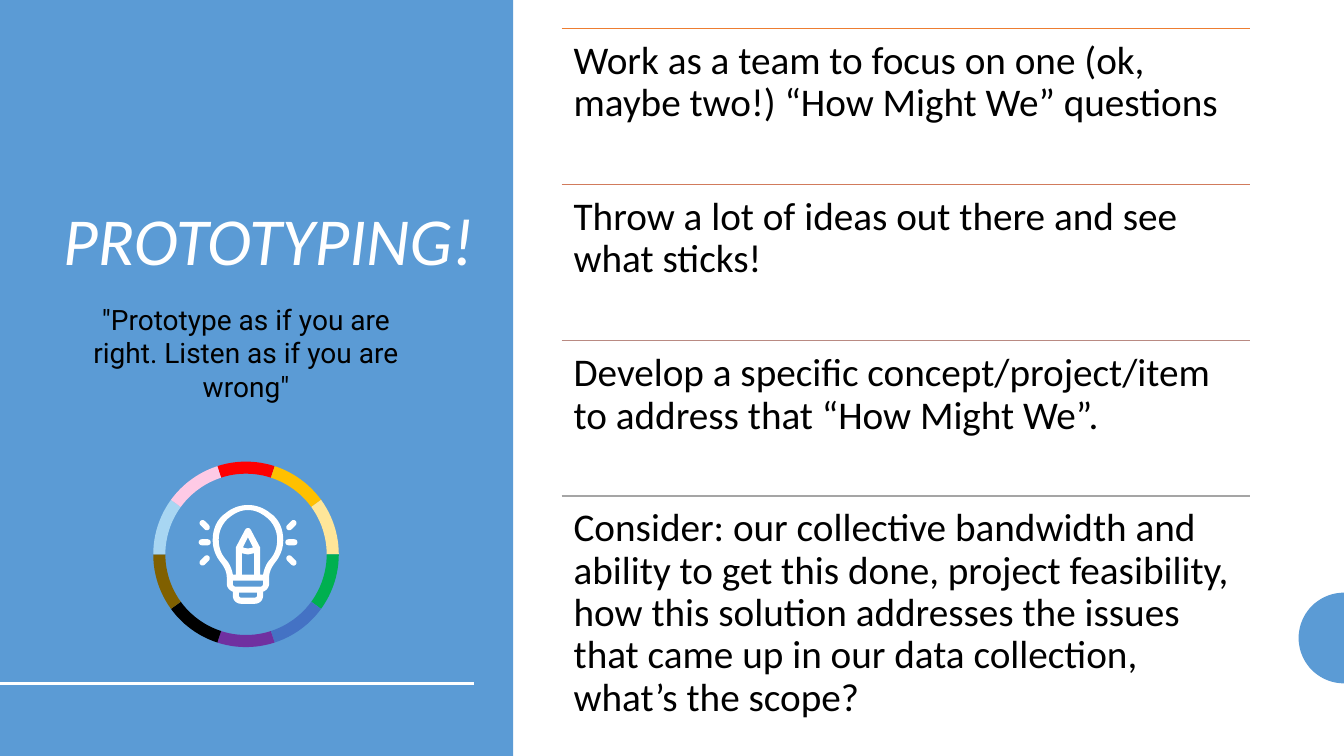
from math import cos, radians, sin

from lxml import etree
from pptx import Presentation
from pptx.dml.color import RGBColor
from pptx.enum.shapes import MSO_CONNECTOR, MSO_SHAPE
from pptx.enum.text import PP_ALIGN
from pptx.oxml.ns import qn
from pptx.util import Pt

PX = 9144  # 100 px to the inch
RECTANGLE, ROUNDED = MSO_SHAPE.RECTANGLE, MSO_SHAPE.ROUNDED_RECTANGLE
STRAIGHT = MSO_CONNECTOR.STRAIGHT
LEFT, CENTER, RIGHT = PP_ALIGN.LEFT, PP_ALIGN.CENTER, PP_ALIGN.RIGHT

COLORS = {
    "blue": "5B9BD5", "white": "FFFFFF", "black": "000000",
    "step1": "ED7D31", "step2": "D17B5C", "step3": "B98A82", "step4": "A5A5A5",
    "red": "FF0000", "gold": "FFC000", "cream": "FFE699", "green": "00B050",
    "royal": "4472C4", "purple": "7030A0", "brown": "806000",
    "sky": "A8D6F2", "pink": "FECAE5",
}
RING = ["red", "gold", "cream", "green", "royal",
        "purple", "black", "brown", "sky", "pink"]
STEPS = [
    ("step1", "Work as a team to focus on one (ok, maybe two!) “How Might We” questions"),
    ("step2", "Throw a lot of ideas out there and see what sticks!"),
    ("step3", "Develop a specific concept/project/item to address that “How Might We”."),
    ("step4", "Consider: our collective bandwidth and ability to get this done, project "
              "feasibility, how this solution addresses the issues that came up in our "
              "data collection, what’s the scope?"),
]
# Right halves of the bulb's outlines, x from its axis: points or cubic curves
BULB_HALVES = [
    [(0, 0), (8, 0, 16, 3, 22, 8), (31, 14, 35, 24, 35, 35), (35, 43, 32, 51, 27, 57),
     (23, 62, 21, 67, 21, 72), (21, 78), (21, 82, 18, 85, 15, 86), (15, 90),
     (15, 95, 11, 98, 7, 98), (0, 98)],
    [(0, 5), (7, 5, 13, 8, 18, 12), (25, 17, 29, 26, 29, 34), (29, 42, 27, 48, 22, 54),
     (18, 58, 16, 64, 15, 69), (12, 69), (12, 42), (3, 25), (2, 23, 1, 23, 0, 23)],
    [(0, 32), (5, 42), (3, 43, 1, 43, 0, 43)],
    [(0, 49), (2, 49, 4, 48, 6, 48), (6, 69), (0, 69)],
    [(0, 75), (15, 75), (15, 78), (15, 80, 14, 81, 12, 81), (0, 81)],
    [(0, 87), (9, 87), (9, 90), (9, 91, 8, 92, 6, 92), (0, 92)],
]


def color(name):
    return RGBColor.from_string(COLORS[name])


def paint(shape, fill):
    shape.shadow.inherit = False
    shape.fill.solid()
    shape.fill.fore_color.rgb = color(fill)
    shape.line.fill.background()


def add_block(slide, preset, box, fill):
    block = slide.shapes.add_shape(preset, *(v * PX for v in box))
    paint(block, fill)
    return block


def add_outline(slide, contours, fill):
    contours = [[(x * PX, y * PX) for x, y in contour] for contour in contours]
    builder = slide.shapes.build_freeform(*contours[0][0], scale=1.0)
    builder.add_line_segments(contours[0][1:], close=True)
    for contour in contours[1:]:
        builder.move_to(*contour[0])
        builder.add_line_segments(contour[1:], close=True)
    paint(builder.convert_to_shape(), fill)


def add_rule(slide, left, right, y, name, points):
    rule = slide.shapes.add_connector(STRAIGHT, left * PX, y * PX, right * PX, y * PX)
    rule.line.color.rgb = color(name)
    rule.line.width = Pt(points)
    etree.SubElement(rule._element.spPr, qn("a:effectLst"))


def add_text(slide, box, text, ink, align, spacing, inset, font):
    frame = slide.shapes.add_textbox(*(v * PX for v in box)).text_frame
    frame.word_wrap = True
    for side, margin in inset.items():
        setattr(frame, f"margin_{side}", margin * PX)
    paragraph = frame.paragraphs[0]
    paragraph.alignment, paragraph.line_spacing = align, spacing
    run = paragraph.add_run()
    run.text = text
    run.font.color.rgb = color(ink)
    for key, value in font.items():
        setattr(run.font, key, value)


def arc(cx, cy, radius, start, end, steps):
    angles = [radians(start + (end - start) * i / steps) for i in range(steps + 1)]
    return [(cx + radius * cos(a), cy + radius * sin(a)) for a in angles]


def flatten(half, steps=8):
    points = [half[0]]
    for part in half[1:]:
        if len(part) == 2:
            points.append(part)
            continue
        x0, y0 = points[-1]
        x1, y1, x2, y2, x3, y3 = part
        for i in range(1, steps + 1):
            t = i / steps
            a, b, c, d = (1 - t) ** 3, 3 * t * (1 - t) ** 2, 3 * t * t * (1 - t), t ** 3
            points.append((a * x0 + b * x1 + c * x2 + d * x3,
                           a * y0 + b * y1 + c * y2 + d * y3))
    return points


def add_bulb(slide, axis, top):
    contours = []
    for half in BULB_HALVES:
        side = flatten(half)
        whole = side + [(-x, y) for x, y in reversed(side)]
        contours.append([(axis + x, top + y) for x, y in whole])
    add_outline(slide, contours, "white")
    # Rays on both sides
    for side in (-1, 1):
        for dy, tilt in ((20, -45), (37, 0), (55, 45)):
            cx, cy = axis + side * 43, top + dy
            ray = add_block(slide, ROUNDED, (cx - 6, cy - 3, 12, 6), "white")
            ray.adjustments[0] = 0.5
            ray.rotation = side * tilt


def add_badge(slide, left, top, size):
    cx, cy, outer = left + size // 2, top + size // 2, size // 2
    inner = outer - 12
    sweep = 360 / len(RING)
    for i, name in enumerate(RING):
        start = -90 + (i - 0.5) * sweep
        end = start + sweep
        segment = arc(cx, cy, outer, start, end, 12) + arc(cx, cy, inner, end, start, 12)
        add_outline(slide, [segment], name)
    add_bulb(slide, cx + 2, cy - 49)


def add_side_panel(slide, left, top, width, height):
    add_block(slide, RECTANGLE, (left, top, width, height), "blue")
    add_text(slide, (left - 9, top + 201, 489, 117), "PROTOTYPING!", "white", RIGHT, 0.9,
             {}, {"name": "Calibri", "size": Pt(48), "italic": True})
    add_rule(slide, left, left + 470, top + 678, "white", 2)
    add_badge(slide, left + 152, top + 458, 184)
    add_text(slide, (left + 57, top + 295, 374, 77),
             '"Prototype as if you are right. Listen as if you are wrong"',
             "black", CENTER, 1.0, {"left": 12, "right": 12},
             {"name": "Roboto", "size": Pt(20)})


def add_steps(slide, left, top, width, height):
    pitch = height / len(STEPS)
    inset = dict.fromkeys(("left", "top", "right", "bottom"), 12)
    for i, (name, step) in enumerate(STEPS):
        y = round(top + i * pitch)
        add_rule(slide, left, left + width, y, name, 1)
        add_text(slide, (left, y, width, round(pitch)), step, "black", LEFT, 0.9,
                 inset, {"name": "Calibri", "size": Pt(28)})


def main():
    deck = Presentation()
    deck.slide_width, deck.slide_height = 1333 * PX, 750 * PX
    slide = deck.slides.add_slide(deck.slide_layouts[6])
    # Half disc on the right edge
    add_outline(slide, [arc(1333, 633, 45, 90, 270, 40)], "blue")
    add_side_panel(slide, 0, 0, 509, 750)
    add_steps(slide, 557, 28, 683, 619)
    deck.save("out.pptx")


if __name__ == "__main__":
    main()
